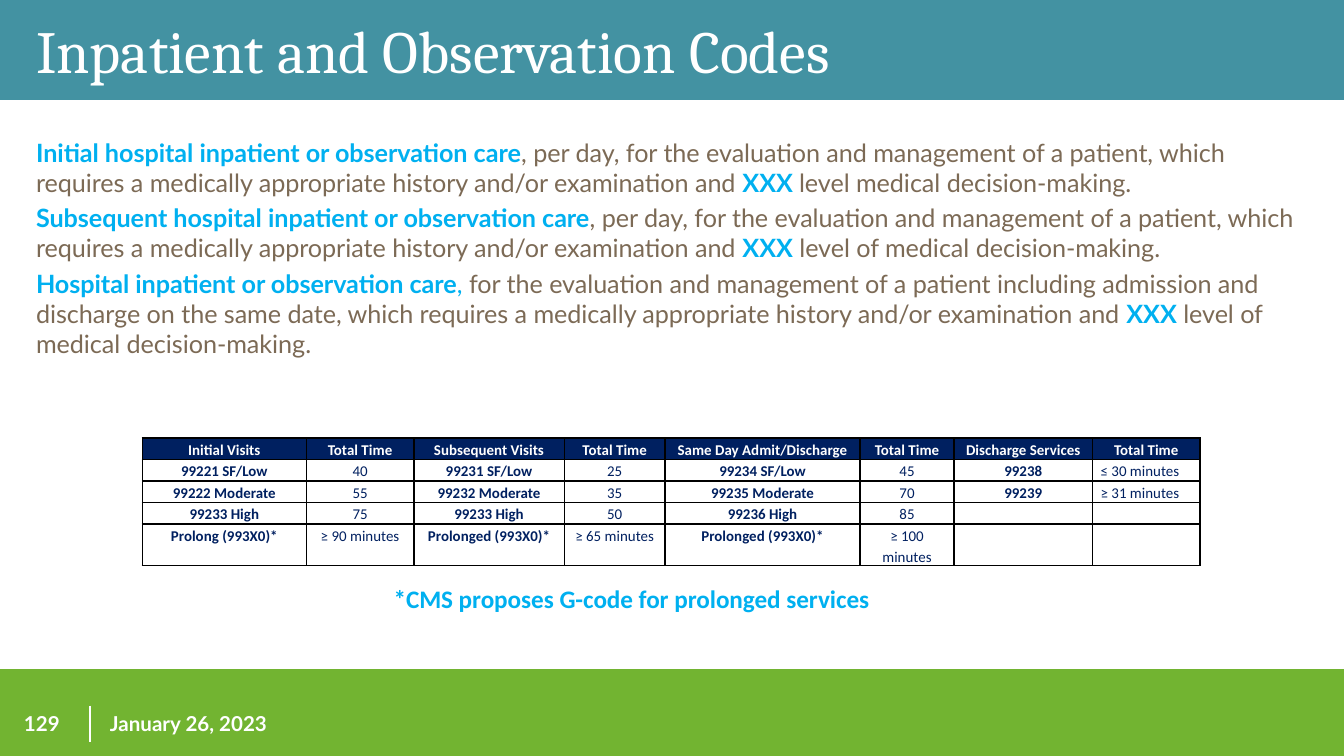
from lxml import etree
from pptx import Presentation
from pptx.dml.color import RGBColor
from pptx.enum.shapes import MSO_CONNECTOR as Link, MSO_SHAPE as Shape
from pptx.enum.text import MSO_ANCHOR as Anchor, PP_ALIGN as Align
from pptx.oxml.ns import qn
from pptx.util import Inches, Pt

WHITE = RGBColor(0xFF, 0xFF, 0xFF)
GREEN = RGBColor(0x72, 0xB4, 0x31)
TEAL = RGBColor(0x43, 0x92, 0xA2)
BLUE = RGBColor(0x00, 0xB0, 0xF0)
BROWN = RGBColor(0x7C, 0x6A, 0x55)
NAVY = RGBColor(0x00, 0x20, 0x60)

WIDE = 10
HIGH = WIDE * 9 / 16


def add_run(para, text, size, face, color, bold=False):
    run = para.add_run()
    run.text = text
    font = run.font
    font.size, font.name, font.bold = Pt(size), face, bold
    font.color.rgb = color


def add_box(left, top, width, height, anchor=Anchor.TOP):
    """Add a wrapping text box and return its text frame."""
    box = slide.shapes.add_textbox(
        Inches(left), Inches(top), Inches(width), Inches(height))
    frame = box.text_frame
    frame.word_wrap = True
    frame.vertical_anchor = anchor
    return frame


deck = Presentation()
deck.slide_width, deck.slide_height = Inches(WIDE), Inches(HIGH)
slide = deck.slides.add_slide(deck.slide_layouts[6])

# Header and footer bands
for top, height, color in [(4.98, HIGH - 4.98, GREEN), (0, 0.73, TEAL)]:
    band = slide.shapes.add_shape(
        Shape.RECTANGLE, 0, Inches(top), Inches(WIDE), Inches(height))
    band.shadow.inherit = False
    band.fill.solid()
    band.fill.fore_color.rgb = color
    if color == TEAL:
        band.line.color.rgb = TEAL
        band.line.width = Pt(2)
    else:
        band.line.fill.background()

# Footer
rule = slide.shapes.add_connector(
    Link.STRAIGHT, Inches(0.67), Inches(5.25), Inches(0.67), Inches(5.52))
rule.line.color.rgb = WHITE
rule.line.width = Pt(1)
etree.SubElement(rule.element.spPr, qn("a:effectLst"))

for left, width, text in [(0.08, 0.61, "129"), (0.72, 2, "January 26, 2023")]:
    frame = add_box(left, 5.25, width, 0.27, Anchor.MIDDLE)
    add_run(frame.paragraphs[0], text, 11, "Lato", WHITE, True)

# Title
frame = add_box(0.17, -0.15, 9.67, 1.04, Anchor.MIDDLE)
add_run(frame.paragraphs[0], "Inpatient and Observation Codes",
        32, "Cambria", WHITE)

# Code descriptions: text, color, bold
daily = (", per day, for the evaluation and management of a patient, which "
         "requires a medically appropriate history and/or examination and ")
same = ("for the evaluation and management of a patient including admission "
        "and discharge on the same date, which requires a medically "
        "appropriate history and/or examination and ")
level = " level of medical decision-making."
notes = [
    [("Initial hospital inpatient or observation care", BLUE, True),
     (daily, BROWN, False), ("XXX ", BLUE, True),
     ("level medical decision-making.", BROWN, False)],
    [("Subsequent hospital inpatient or observation care", BLUE, True),
     (daily, BROWN, False), ("XXX", BLUE, True), (level, BROWN, False)],
    [("Hospital inpatient or observation care", BLUE, True),
     (", ", BLUE, False), (same, BROWN, False),
     ("XXX", BLUE, True), (level, BROWN, False)],
]
frame = add_box(0.17, 0.97, 9.67, 4)
for i, note in enumerate(notes):
    para = frame.add_paragraph() if i else frame.paragraphs[0]
    if i:
        para.space_before = Pt(2.7)
    for text, color, bold in note:
        add_run(para, text, 13.5, "Lato", color, bold)

# Table of codes and times
rows = [
    ["Initial Visits", "Total Time", "Subsequent Visits", "Total Time",
     "Same Day Admit/Discharge", "Total Time", "Discharge Services",
     "Total Time"],
    ["99221 SF/Low", "40", "99231 SF/Low", "25", "99234 SF/Low", "45",
     "99238", "≤ 30 minutes"],
    ["99222 Moderate", "55", "99232 Moderate", "35", "99235 Moderate", "70",
     "99239", "≥ 31 minutes"],
    ["99233 High", "75", "99233 High", "50", "99236 High", "85", "", ""],
    ["Prolong (993X0)*", "≥ 90 minutes", "Prolonged (993X0)*",
     "≥ 65 minutes", "Prolonged (993X0)*", "≥ 100 minutes", "", ""],
]
widths = [1.22, 0.8, 1.12, 0.75, 1.45, 0.7, 1.03, 0.8]
heights = [0.16] * 4 + [0.31]
table = slide.shapes.add_table(
    len(rows), len(widths), Inches(1.06), Inches(3.26),
    Inches(sum(widths)), Inches(sum(heights))).table
for col, width in zip(table.columns, widths):
    col.width = Inches(width)
for row, height in zip(table.rows, heights):
    row.height = Inches(height)

for r, row in enumerate(rows):
    for c, text in enumerate(row):
        cell = table.cell(r, c)
        cell.margin_left = cell.margin_right = Inches(0.06)
        cell.margin_top = cell.margin_bottom = 0
        props = cell._tc.get_or_add_tcPr()
        for side in ("lnL", "lnR", "lnT", "lnB"):
            edge = etree.SubElement(props, qn("a:" + side), w=str(Pt(1)))
            paint = etree.SubElement(edge, qn("a:solidFill"))
            etree.SubElement(paint, qn("a:srgbClr"), val="000000")
        head = r == 0
        if head:
            cell.fill.solid()
            cell.fill.fore_color.rgb = NAVY
        else:
            cell.fill.background()
        para = cell.text_frame.paragraphs[0]
        para.line_spacing = 1.15
        last = c == len(row) - 1
        para.alignment = Align.LEFT if last and not head else Align.CENTER
        if text:
            add_run(para, text, 8, "Calibri", WHITE if head else NAVY,
                    head or c % 2 == 0)
        else:
            # Keeps an empty cell from stretching its row
            etree.SubElement(para._p, qn("a:endParaRPr"), sz="800")

# Footnote
frame = add_box(2.83, 4.29, 3.85, 0.33)
add_run(frame.paragraphs[0], "*CMS proposes G-code for prolonged services",
        13.5, "Calibri", BLUE, True)

deck.save("out.pptx")
